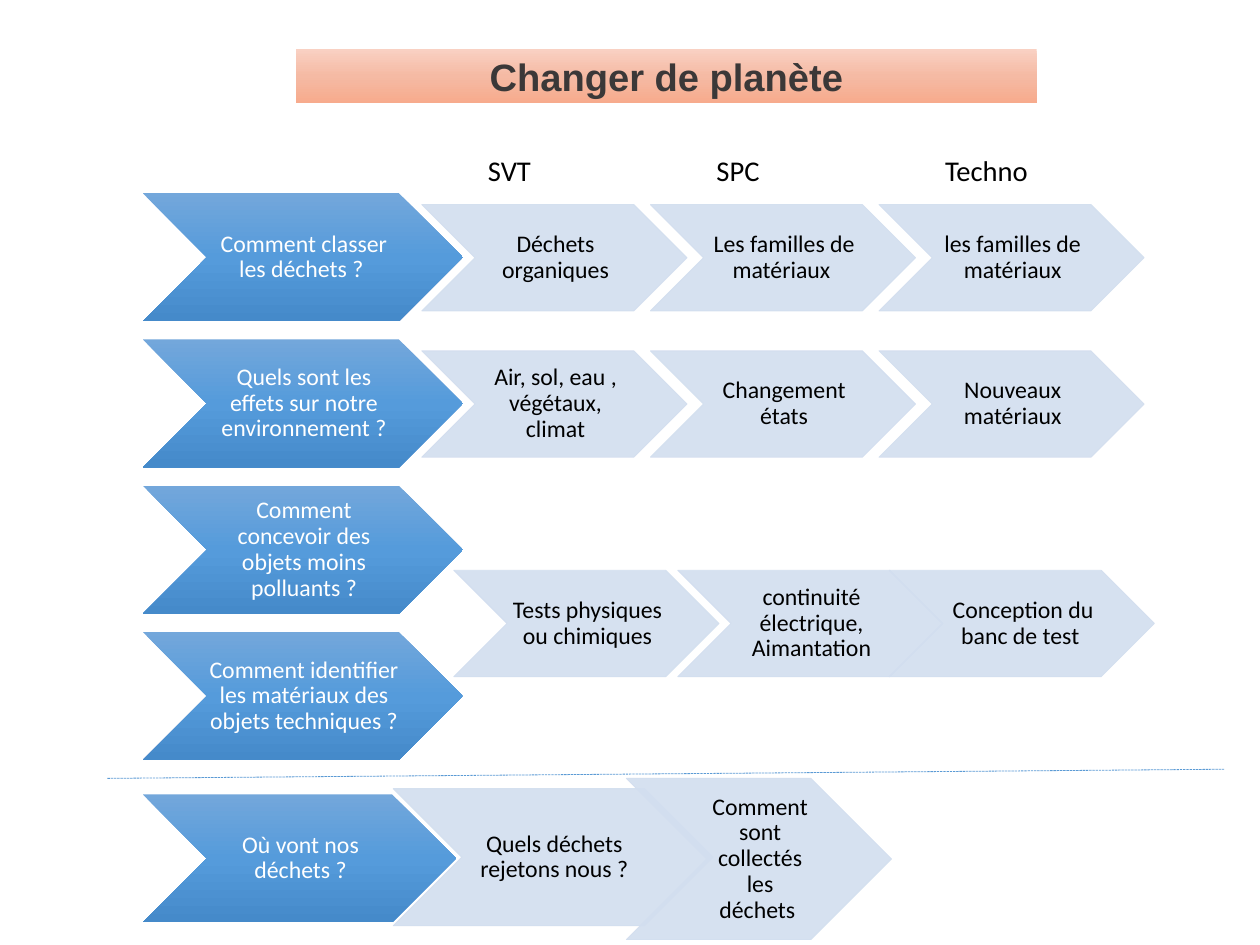
from copy import deepcopy
from lxml import etree
from pptx import Presentation
from pptx import util as u
from pptx.dml.color import RGBColor
from pptx.enum import dml, shapes, text
from pptx.oxml.ns import qn

title = "Changer de planète"
heads = ["SVT", "SPC", "Techno"]
steps = [
    ("Comment classer les déchets ? ",
     ["Déchets organiques", "Les familles de matériaux ", "les familles de matériaux"]),
    ("Quels sont les effets sur notre environnement ?",
     ["Air, sol, eau , végétaux, climat", "Changement états", "Nouveaux matériaux"]),
    ("Comment concevoir des objets moins polluants ?", []),
    ("Comment identifier les matériaux des objets techniques ?", []),
]
tests = [
    ("Tests physiques ou chimiques", 3.97),
    ("continuité électrique, Aimantation", 5.93),
    ("Conception du banc de test ", 7.78),
]
last = "Où vont nos déchets ?"
waste = [
    ("Quels déchets rejetons nous ?", (3.44, 6.9, 2.8, 1.2)),
    ("Comment sont collectés les déchets ", (5.48, 6.81, 2.32, 1.41)),
]

theme = {
    "title": ["F9D1C3", "F5BAA4", "F7AB8D"],
    "dark": ["73A7DB", "559BDB", "458ACA"],
    "light": "D2DEEF", "rule": "5B9BD5",
    "ink": "000000", "white": "FFFFFF", "gray": "3B3838",
    "big": 24, "mid": 18, "small": 15,
    "head": "Arial", "body": "Calibri",
}
left, top, pitch = 1.25, 1.69, 1.28
col, gap = 3.69, 2
wide, high = 2.8, 1.12
slim, low = 2.32, 0.93
inset = (0.02, 0.01, 0, 0.01)

deck = Presentation()
deck.slide_width = u.Cm(28)
deck.slide_height = u.Cm(21)
slide = deck.slides.add_slide(deck.slide_layouts[6])


def rgb(key):
    return RGBColor.from_string(theme[key])


def write(shape, words, size="small", color="ink", font="body", bold=False,
          align=text.PP_ALIGN.CENTER, anchor=text.MSO_ANCHOR.MIDDLE,
          wrap=True, space=None, pad=(0.1, 0.05, 0.1, 0.05), tabs=()):
    frame = shape.text_frame
    frame.word_wrap = wrap
    frame.vertical_anchor = anchor
    (frame.margin_left, frame.margin_top,
     frame.margin_right, frame.margin_bottom) = map(u.Inches, pad)
    para = frame.paragraphs[0]
    if tabs:
        stops = etree.SubElement(para._p.get_or_add_pPr(), qn("a:tabLst"))
        for stop in tabs:
            etree.SubElement(stops, qn("a:tab"), pos=str(u.Inches(stop)), algn="l")
    para.alignment = align
    if space:
        para.line_spacing = space
    run = para.add_run()
    run.text = words
    run.font.name, run.font.size = theme[font], u.Pt(theme[size])
    run.font.bold, run.font.color.rgb = bold, rgb(color)


def block(kind, box):
    shape = slide.shapes.add_shape(kind, *map(u.Inches, box))
    shape.shadow.inherit = False
    return shape


def shade(shape, key):
    shape.line.fill.background()
    shape.fill.gradient()
    shape.fill.gradient_angle = 270
    stops = shape._element.spPr.find(qn("a:gradFill")).find(qn("a:gsLst"))
    stops.append(deepcopy(stops[0]))
    for i, stop in enumerate(shape.fill.gradient_stops):
        stop.position = i / 2
        stop.color.rgb = RGBColor.from_string(theme[key][i])


def dark(words, y, w=wide):
    shape = block(shapes.MSO_SHAPE.CHEVRON, (left, y, w, high))
    shade(shape, "dark")
    write(shape, words, color="white", space=0.9, pad=inset)


def light(words, box):
    shape = block(shapes.MSO_SHAPE.CHEVRON, box)
    shape.fill.solid()
    shape.fill.fore_color.rgb = rgb("light")
    shape.line.color.rgb = rgb("light")
    shape.line.width = u.Pt(0.5)
    for tint in shape._element.spPr.iter(qn("a:srgbClr")):
        etree.SubElement(tint, qn("a:alpha"), val="90000")
    write(shape, words, space=0.9, pad=inset)


banner = block(shapes.MSO_SHAPE.RECTANGLE, (2.59, 0.43, 6.48, 0.47))
shade(banner, "title")
write(banner, title, size="big", color="gray", font="head", bold=True, wrap=False)

for r, (ask, cells) in enumerate(steps):
    y = top + r * pitch
    dark(ask, y)
    for c, cell in enumerate(cells):
        light(cell, (col + c * gap, y + 0.1, slim, low))
for words, x in tests:
    light(words, (x, 4.99, slim, low))

dark(last, 6.95, 2.74)
for words, box in waste:
    light(words, box)

names = slide.shapes.add_textbox(*map(u.Inches, (4.17, 1.29, 4.96, 0.4)))
write(names, "\t".join(heads), size="mid", align=text.PP_ALIGN.LEFT,
      anchor=text.MSO_ANCHOR.TOP, tabs=(gap, 2 * gap))

rule = slide.shapes.add_connector(shapes.MSO_CONNECTOR.STRAIGHT,
                                  *map(u.Inches, (0.94, 6.81, 10.71, 6.73)))
rule.line.color.rgb = rgb("rule")
rule.line.width = u.Pt(0.5)
rule.line.dash_style = dml.MSO_LINE.SQUARE_DOT
etree.SubElement(rule._element.spPr, qn("a:effectLst"))

deck.save("out.pptx")
